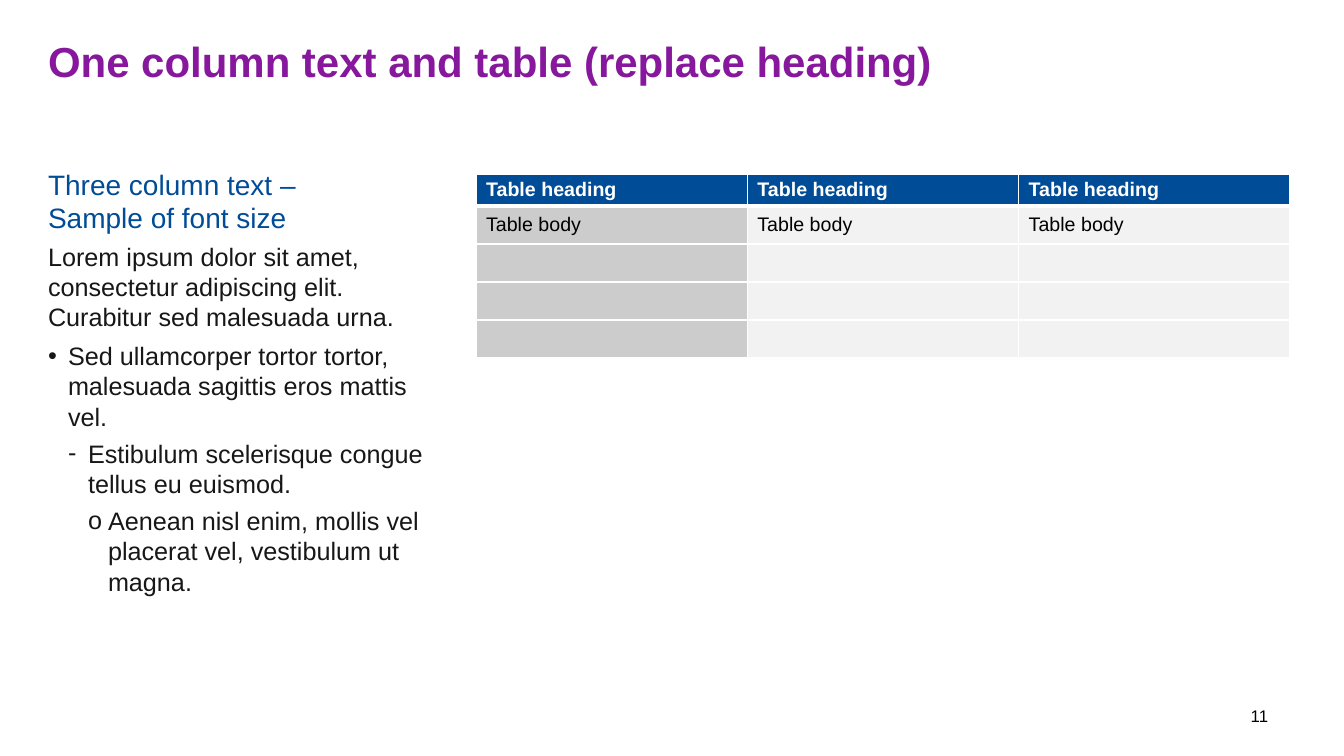
from dataclasses import dataclass

from lxml import etree
from pptx import Presentation
from pptx.dml.color import RGBColor
from pptx.enum.text import MSO_ANCHOR, MSO_AUTO_SIZE, PP_ALIGN
from pptx.oxml.ns import qn
from pptx.util import Emu, Pt

TOP, MIDDLE = MSO_ANCHOR.TOP, MSO_ANCHOR.MIDDLE
LEFT, CENTER = PP_ALIGN.LEFT, PP_ALIGN.CENTER
FIXED = MSO_AUTO_SIZE.NONE
FONT = "Arial"
PURPLE, BLUE, INK = "87189D", "004C97", "181717"
WHITE, BLACK, GREY, PALE = "FFFFFF", "000000", "CCCCCC", "F2F2F2"
STEP = 20


@dataclass
class Box:
    left: int
    top: int
    width: int
    height: int


@dataclass
class Para:
    lines: tuple[str, ...]
    level: int
    before: int
    size: int = 18
    color: str = INK
    bullet: str = ""


TITLE = Box(48, 41, 1244, 87)
BODY = Box(48, 167, 376, 508)
TABLE = Box(476, 174, 814, 186)
NUMBER = Box(1227, 696, 65, 40)
HEAD = 32

PARAS = [
    Para(("Three column text – ", "Sample of font size"), 0, 10, 20, BLUE),
    Para(("Lorem ipsum dolor sit amet, consectetur adipiscing elit. "
          "Curabitur sed malesuada urna.",), 1, 5),
    Para(("Sed ullamcorper tortor tortor, malesuada sagittis eros mattis vel.",),
         2, 6, bullet="•"),
    Para(("Estibulum scelerisque congue tellus eu euismod.",), 3, 5, bullet="-"),
    Para(("Aenean nisl enim, mollis vel placerat vel, vestibulum ut magna. ",),
         4, 5, bullet="o"),
]
ROWS = [["Table heading"] * 3, ["Table body"] * 3] + [[""] * 3] * 3


def px(count: int) -> Emu:
    return Emu(round(count * 914400 / 100.8))


def rgb(color: str) -> RGBColor:
    return RGBColor.from_string(color)


def place(shape, box: Box) -> None:
    shape.left, shape.top = px(box.left), px(box.top)
    shape.width, shape.height = px(box.width), px(box.height)


def setup(frame, anchor: MSO_ANCHOR) -> None:
    frame.word_wrap = True
    frame.auto_size = FIXED
    frame.vertical_anchor = anchor
    frame.margin_left = frame.margin_right = 0
    frame.margin_top = frame.margin_bottom = 0


def write(para, text: str, size: int, color: str, bold: bool = False) -> None:
    run = para.add_run()
    run.text = text
    run.font.name = FONT
    run.font.size = Pt(size)
    run.font.bold = bold
    run.font.color.rgb = rgb(color)


def indent(para, level: int, bullet: str) -> None:
    props = para._p.get_or_add_pPr()
    props.set("marL", str(px(STEP * max(level - 1, 0))))
    props.set("indent", str(-px(STEP) if bullet else 0))
    if bullet:
        etree.SubElement(props, qn("a:buFont"), typeface=FONT)
        etree.SubElement(props, qn("a:buChar"), char=bullet)


def border(cell, side: str, width: int) -> None:
    props = cell._tc.get_or_add_tcPr()
    line = etree.SubElement(props, qn(f"a:ln{side}"), w=str(Pt(width)))
    fill = etree.SubElement(line, qn("a:solidFill"))
    etree.SubElement(fill, qn("a:srgbClr"), val=WHITE)


def draw_title(slide) -> None:
    title = slide.shapes.title
    place(title, TITLE)
    setup(title.text_frame, TOP)
    para = title.text_frame.paragraphs[0]
    para.alignment = LEFT
    para.line_spacing = 0.9
    write(para, "One column text and table (replace heading)", 30, PURPLE, True)


def add_frame(slide, box: Box, anchor: MSO_ANCHOR):
    shape = slide.shapes.add_textbox(0, 0, 0, 0)
    place(shape, box)
    setup(shape.text_frame, anchor)
    return shape.text_frame


def draw_body(slide) -> None:
    frame = add_frame(slide, BODY, TOP)
    for index, item in enumerate(PARAS):
        para = frame.add_paragraph() if index else frame.paragraphs[0]
        para.level = item.level
        para.line_spacing = 1.0
        para.space_before = Pt(item.before)
        indent(para, item.level, item.bullet)
        for number, line in enumerate(item.lines):
            if number:
                para.add_line_break()
            write(para, line, item.size, item.color)


def draw_cell(cell, text: str, row: int, col: int) -> None:
    cell.vertical_anchor = MIDDLE
    cell.margin_top = cell.margin_bottom = px(3)
    widths = {"L": 1, "R": 1, "T": 3 if row == 1 else 1, "B": 1 if row else 3}
    for side, width in widths.items():
        border(cell, side, width)
    cell.fill.solid()
    cell.fill.fore_color.rgb = rgb(BLUE if row == 0 else PALE if col else GREY)
    if text:
        color = BLACK if row else WHITE
        write(cell.text_frame.paragraphs[0], text, 14, color, row == 0)


def draw_table(slide) -> None:
    count, cols = len(ROWS), len(ROWS[0])
    frame = slide.shapes.add_table(count, cols, 0, 0, 0, 0)
    place(frame, TABLE)
    table = frame.table
    table.horz_banding = False
    for col in table.columns:
        col.width = px(TABLE.width) // cols
    for index, texts in enumerate(ROWS):
        rest = (TABLE.height - HEAD) // (count - 1)
        table.rows[index].height = px(rest if index else HEAD)
        for col, text in enumerate(texts):
            draw_cell(table.cell(index, col), text, index, col)


def draw_number(slide) -> None:
    para = add_frame(slide, NUMBER, MIDDLE).paragraphs[0]
    para.alignment = CENTER
    write(para, "11", 12, BLACK)


def main() -> None:
    deck = Presentation()
    deck.slide_width, deck.slide_height = px(1344), px(756)
    slide = deck.slides.add_slide(deck.slide_layouts[5])
    draw_title(slide)
    draw_body(slide)
    draw_table(slide)
    draw_number(slide)
    deck.save("out.pptx")


if __name__ == "__main__":
    main()
